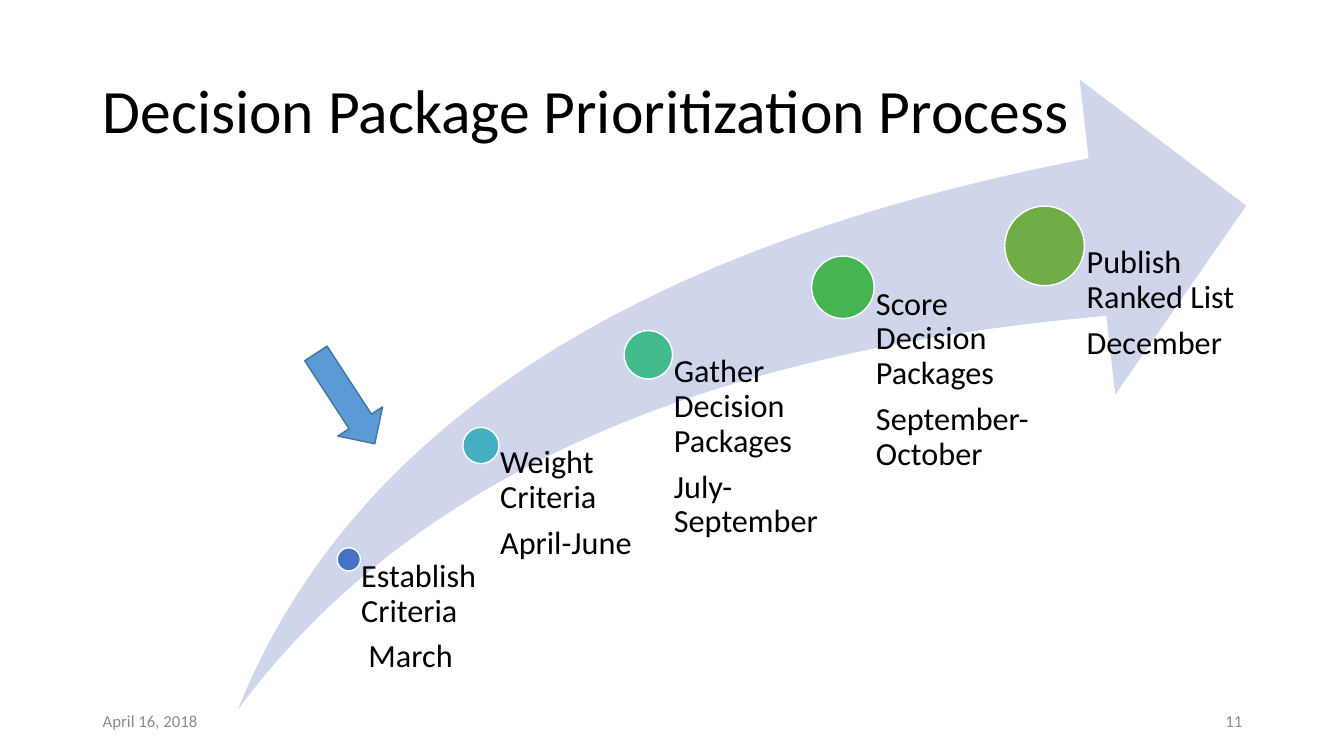
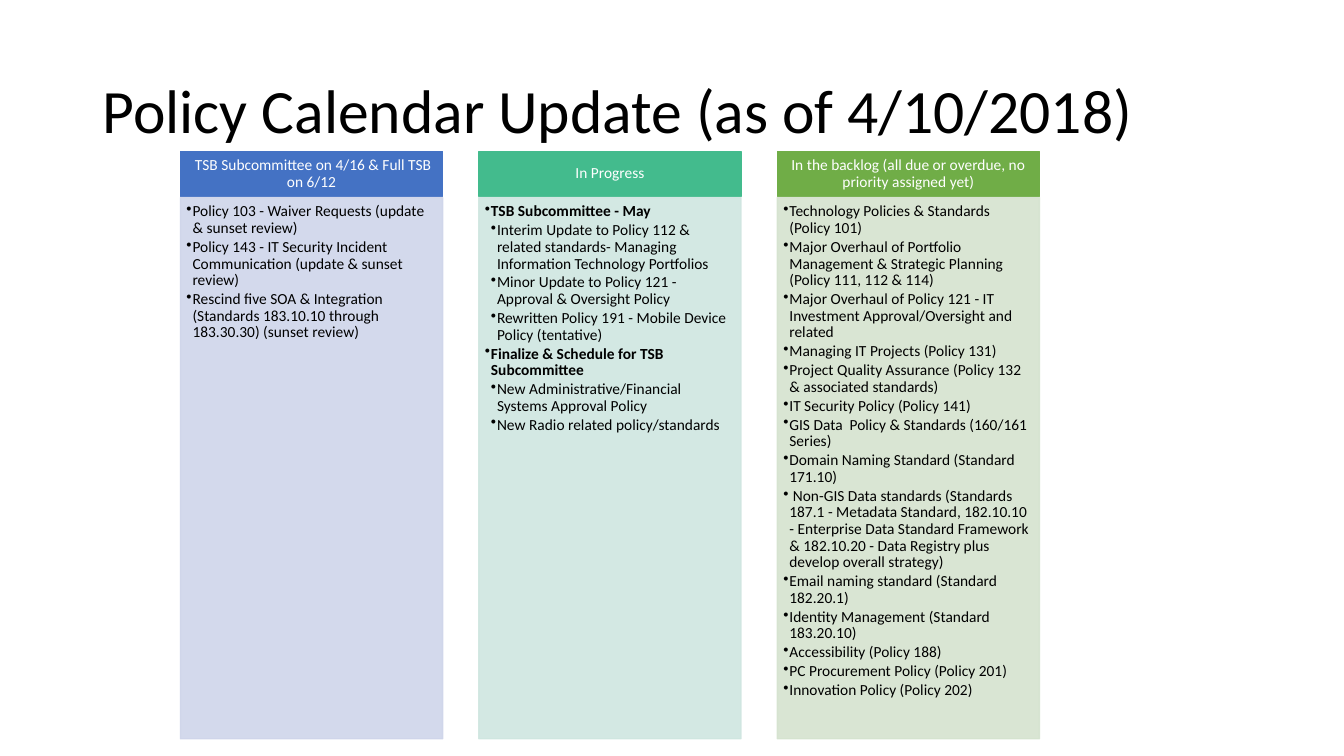
import lxml.etree
import pptx
import pptx.dml.color
import pptx.enum.shapes
import pptx.enum.text
import pptx.oxml.ns
import pptx.util

Inches, Pt = pptx.util.Inches, pptx.util.Pt
SHAPES = pptx.enum.shapes.MSO_SHAPE
ALIGN = pptx.enum.text.PP_ALIGN
ANCHOR = pptx.enum.text.MSO_ANCHOR

FONT = "Calibri"
BLACK, WHITE, GREY = "000000", "FFFFFF", "8C8C8C"
BLUE, TEAL, MINT, GREEN, OLIVE = "4472C4", "43AFC0", "43BB8D", "45B451", "70AD47"
SWOOSH_BLUE, POINTER_BLUE, POINTER_EDGE = "CFD5EA", "5B9BD5", "43739E"
LINE_SPACING = 0.9
DEFAULT_INSETS = (0.1, 0.05, 0.1, 0.05)

PROCESS_TITLE = "Decision Package Prioritization Process"
# (label paragraphs, colour, centre x, centre y, diameter, label width)
STEPS = [
    (["Establish Criteria", " March"], BLUE, 3.46, 5.55, 0.23, 1.31),
    (["Weight Criteria", "April-June"], TEAL, 4.77, 4.42, 0.36, 1.66),
    (["Gather Decision Packages", "July-September"], MINT, 6.43, 3.52, 0.48, 1.93),
    (["Score Decision Packages", "September-October"], GREEN, 8.36, 2.85, 0.62, 2),
    (["Publish Ranked List", "December"], OLIVE, 10.36, 2.44, 0.79, 2),
]
SWOOSH_AREA = (2.36, 0.79, 10, 6.25)
LABEL_BOTTOM = SWOOSH_AREA[1] + SWOOSH_AREA[3]
LABEL_INSET_RATIO = 0.53
FOOTERS = [("April 16, 2018", 0.92, ALIGN.LEFT), ("11", 9.42, ALIGN.RIGHT)]

CALENDAR_TITLE = "Policy Calendar Update (as of 4/10/2018)"
# (heading, heading colour, body colour, [(level, text)])
COLUMNS = [
    (" TSB Subcommittee on 4/16 & Full TSB on 6/12", BLUE, "CFD5EA", [
        (1, "Policy 103 - Waiver Requests (update & sunset review)"),
        (1, "Policy 143 - IT Security Incident Communication (update & sunset review)"),
        (1, "Rescind five SOA & Integration (Standards 183.10.10 through 183.30.30) "
            "(sunset review)"),
    ]),
    ("In Progress", MINT, "CFE6E0", [
        (1, "TSB Subcommittee - May"),
        (2, "Interim Update to Policy 112 & related standards- Managing Information "
            "Technology Portfolios"),
        (2, "Minor Update to Policy 121 - Approval & Oversight Policy"),
        (2, "Rewritten Policy 191 - Mobile Device Policy (tentative)"),
        (1, "Finalize & Schedule for TSB Subcommittee"),
        (2, "New Administrative/Financial Systems Approval Policy"),
        (2, "New Radio related policy/standards"),
    ]),
    ("In the backlog (all due or overdue, no priority assigned yet)", OLIVE, "D5E3CF", [
        (1, "Technology Policies & Standards (Policy 101)"),
        (1, "Major Overhaul of Portfolio Management & Strategic Planning "
            "(Policy 111, 112 & 114)"),
        (1, "Major Overhaul of Policy 121 - IT Investment Approval/Oversight and related"),
        (1, "Managing IT Projects (Policy 131)"),
        (1, "Project Quality Assurance (Policy 132 & associated standards)"),
        (1, "IT Security Policy (Policy 141)"),
        (1, "GIS Data  Policy & Standards (160/161 Series)"),
        (1, "Domain Naming Standard (Standard 171.10)"),
        (1, " Non-GIS Data standards (Standards 187.1 - Metadata Standard, 182.10.10 - "
            "Enterprise Data Standard Framework & 182.10.20 - Data Registry plus "
            "develop overall strategy)"),
        (1, "Email naming standard (Standard 182.20.1)"),
        (1, "Identity Management (Standard 183.20.10)"),
        (1, "Accessibility (Policy 188)"),
        (1, "PC Procurement Policy (Policy 201)"),
        (1, "Innovation Policy (Policy 202)"),
    ]),
]
COLUMN_LEFT, COLUMN_STEP, COLUMN_WIDTH = 1.79, 2.96, 2.6
HEADING_TOP, HEADING_HEIGHT = 1.5, 0.45
BODY_TOP, BODY_HEIGHT = 1.96, 5.37
BULLET_INDENT = 0.06


def rgb(hex_colour):
    return pptx.dml.color.RGBColor.from_string(hex_colour)


def set_values(target, values):
    for name, value in values.items():
        setattr(target, name, value)


def set_opacity(fill, percent):
    colour = fill._xPr.find(".//" + pptx.oxml.ns.qn("a:srgbClr"))
    lxml.etree.SubElement(colour, pptx.oxml.ns.qn("a:alpha"), val=str(percent * 1000))


def add_shape(slide, kind, area, fill, edge, opacity=100):
    """Draw a preset shape; an edge of None leaves out the outline."""
    shape = slide.shapes.add_shape(kind, *map(Inches, area))
    shape.shadow.inherit = False
    paints = [(shape.fill, fill)]
    if edge:
        shape.line.width = Pt(1)
        paints.append((shape.line.fill, edge))
    else:
        shape.line.fill.background()
    for paint, colour in paints:
        paint.solid()
        paint.fore_color.rgb = rgb(colour)
        if opacity < 100:
            set_opacity(paint, opacity)
    return shape


def set_text(shape, texts, size, colour, insets=DEFAULT_INSETS, anchor=ANCHOR.TOP,
             alignment=ALIGN.LEFT, space_after=0, line_spacing=LINE_SPACING):
    """Fill a shape with paragraphs and return them."""
    frame = shape.text_frame
    sides = ("margin_left", "margin_top", "margin_right", "margin_bottom")
    set_values(frame, dict(zip(sides, map(Inches, insets)),
                           word_wrap=True, vertical_anchor=anchor))
    for index, text in enumerate(texts):
        para = frame.paragraphs[0] if index == 0 else frame.add_paragraph()
        set_values(para, {"alignment": alignment, "line_spacing": line_spacing,
                          "space_before": Pt(0), "space_after": Pt(space_after)})
        span = para.add_run()
        span.text = text
        set_values(span.font, {"name": FONT, "size": Pt(size), "bold": False})
        span.font.color.rgb = rgb(colour)
    return frame.paragraphs


def add_text(slide, area, *args, **options):
    box = slide.shapes.add_textbox(*map(Inches, area))
    set_text(box, *args, **options)


def set_bullet(para, level):
    para.level = level
    properties = para._p.get_or_add_pPr()
    properties.set("marL", str(Inches(BULLET_INDENT * level)))
    properties.set("indent", str(-Inches(BULLET_INDENT)))
    lxml.etree.SubElement(properties, pptx.oxml.ns.qn("a:buChar"), char="•")


def add_slide(deck):
    return deck.slides.add_slide(deck.slide_layouts[6])


def add_title(slide, text):
    add_text(slide, (0.92, 0.4, 11.5, 1.45), [text], 44, BLACK, anchor=ANCHOR.MIDDLE)


def add_step(slide, texts, colour, x, y, diameter, width):
    radius = diameter / 2
    add_shape(slide, SHAPES.OVAL, (x - radius, y - radius, diameter, diameter),
              colour, WHITE)
    add_text(slide, (x, y, width, LABEL_BOTTOM - y), texts, 23, BLACK,
             insets=(diameter * LABEL_INSET_RATIO, 0, 0, 0), space_after=8)


def build_process(deck):
    slide = add_slide(deck)
    add_title(slide, PROCESS_TITLE)
    for text, left, alignment in FOOTERS:
        add_text(slide, (left, 6.95, 3, 0.4), [text], 12, GREY, anchor=ANCHOR.MIDDLE,
                 alignment=alignment, line_spacing=1.0)
    swoosh = add_shape(slide, SHAPES.SWOOSH_ARROW, SWOOSH_AREA, SWOOSH_BLUE, None)
    for index in range(2):
        swoosh.adjustments[index] = 0.25
    for step in STEPS:
        add_step(slide, *step)
    pointer = add_shape(slide, SHAPES.UP_ARROW, (3.16, 3.42, 0.53, 1.07),
                        POINTER_BLUE, POINTER_EDGE)
    pointer.rotation = 146.9


def add_column(slide, left, heading, colour, body_colour, items):
    header = add_shape(slide, SHAPES.RECTANGLE,
                       (left, HEADING_TOP, COLUMN_WIDTH, HEADING_HEIGHT), colour, colour)
    set_text(header, [heading], 11, WHITE, insets=(0.09, 0.05, 0.09, 0.05),
             anchor=ANCHOR.MIDDLE, alignment=ALIGN.CENTER)
    body = add_shape(slide, SHAPES.RECTANGLE, (left, BODY_TOP, COLUMN_WIDTH, BODY_HEIGHT),
                     body_colour, body_colour, opacity=90)
    levels, texts = zip(*items)
    paras = set_text(body, texts, 11, BLACK, insets=(0.06, 0.06, 0.09, 0.1),
                     space_after=1.65)
    has_groups = 2 in levels
    for para, level in zip(paras, levels):
        set_bullet(para, level)
        para.runs[0].font.bold = has_groups and level == 1


def build_calendar(deck):
    slide = add_slide(deck)
    for index, column in enumerate(COLUMNS):
        add_column(slide, COLUMN_LEFT + index * COLUMN_STEP, *column)
    add_title(slide, CALENDAR_TITLE)


def main():
    deck = pptx.Presentation()
    set_values(deck, {"slide_width": Inches(13.33), "slide_height": Inches(7.5)})
    build_process(deck)
    build_calendar(deck)
    deck.save("out.pptx")


if __name__ == "__main__":
    main()
